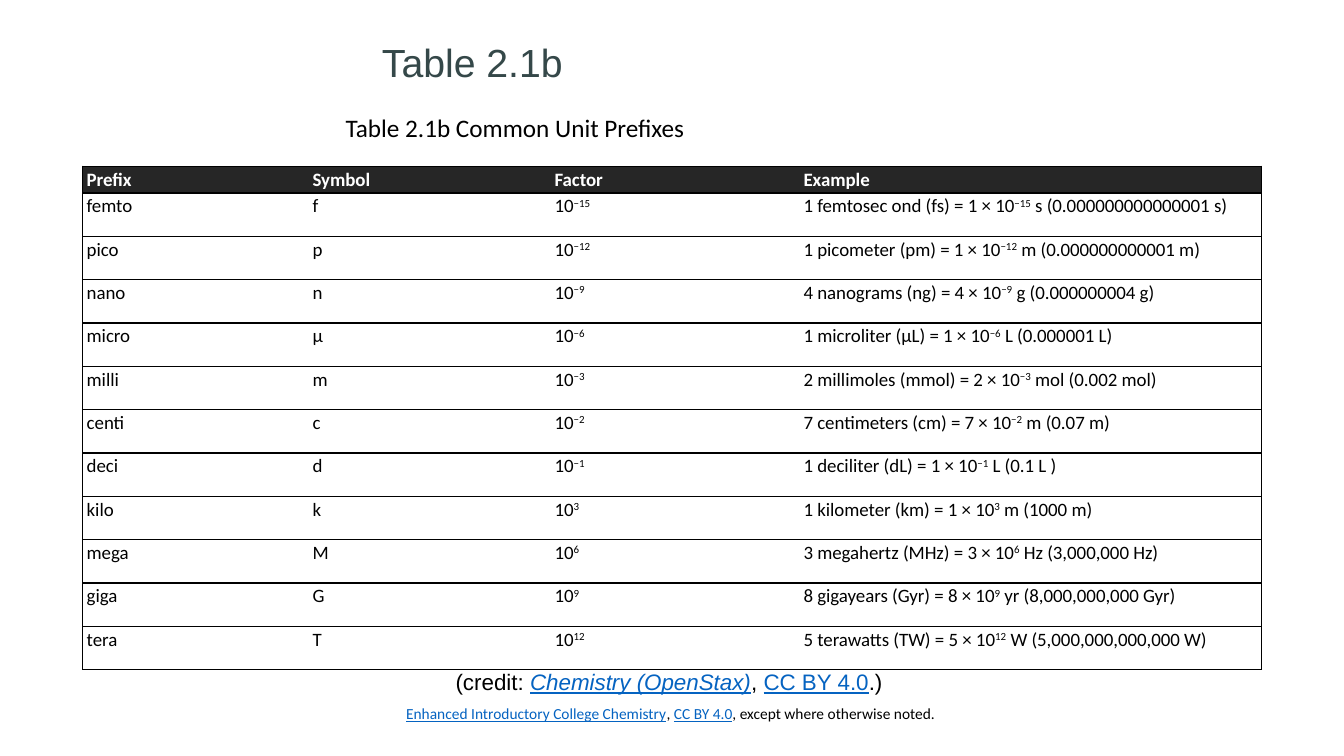
from lxml.etree import SubElement
from pptx import Presentation
from pptx.dml.color import RGBColor
from pptx.enum.text import MSO_ANCHOR
from pptx.oxml.ns import qn
from pptx.util import Inches, Pt

BLACK = RGBColor(0x00, 0x00, 0x00)
WHITE = RGBColor(0xFF, 0xFF, 0xFF)
HEADER_FILL = RGBColor(0x26, 0x26, 0x26)
TITLE_COLOR = RGBColor(0x35, 0x48, 0x49)
LINK_COLOR = RGBColor(0x05, 0x63, 0xC1)
PLAIN_STYLE = "{2D5ABB26-0587-4C30-8999-92F81FD0307C}"

HEADINGS = ["Prefix", "Symbol", "Factor", "Example"]
COLUMN_WIDTHS = [2.24, 2.4, 2.47, 4.58]
HEADER_HEIGHT, ROW_HEIGHT = 0.23, 0.43
# prefix, symbol, exponent, example before and after its power of ten
PREFIXES = [
    ("femto", "f", "−15", "1 femtosec ond (fs) = 1", "s (0.000000000000001 s)"),
    ("pico", "p", "−12", "1 picometer (pm) = 1", "m (0.000000000001 m)"),
    ("nano", "n", "−9", "4 nanograms (ng) = 4", "g (0.000000004 g)"),
    ("micro", "µ", "−6", "1 microliter (μL) = 1", "L (0.000001 L)"),
    ("milli", "m", "−3", "2 millimoles (mmol) = 2", "mol (0.002 mol)"),
    ("centi", "c", "−2", "7 centimeters (cm) = 7", "m (0.07 m)"),
    ("deci", "d", "−1", "1 deciliter (dL) = 1", "L (0.1 L )"),
    ("kilo", "k", "3", "1 kilometer (km) = 1", "m (1000 m)"),
    ("mega", "M", "6", "3 megahertz (MHz) = 3", "Hz (3,000,000 Hz)"),
    ("giga", "G", "9", "8 gigayears (Gyr) = 8", "yr (8,000,000,000 Gyr)"),
    ("tera", "T", "12", "5 terawatts (TW) = 5", "W (5,000,000,000,000 W)"),
]


def add_span(para, text, size, name="Calibri", color=BLACK):
    span = para.add_run()
    span.text = text
    span.font.size = Pt(size)
    span.font.name = name
    span.font.color.rgb = color
    return span


def add_text_box(page, left, top, width, height, wrap=True):
    """Add an empty text box and return its frame."""
    box = page.shapes.add_textbox(Inches(left), Inches(top), Inches(width), Inches(height))
    box.text_frame.word_wrap = wrap
    return box.text_frame


def add_title(page, left, top, width, height):
    frame = add_text_box(page, left, top, width, height)
    frame.vertical_anchor = MSO_ANCHOR.BOTTOM
    para = frame.paragraphs[0]
    para.line_spacing = 0.9
    add_span(para, "Table 2.1b", 28, "Arial", TITLE_COLOR)


def add_caption(page, left, top, width, height):
    frame = add_text_box(page, left, top, width, height)
    add_span(frame.paragraphs[0], "Table 2.1b Common Unit Prefixes", 18)


def add_linked_line(frame, parts, size, name):
    """Write (text, is_link, is_italic) parts as one line."""
    for text, is_link, is_italic in parts:
        span = add_span(frame.paragraphs[0], text, size, name, LINK_COLOR if is_link else BLACK)
        span.font.underline = is_link
        span.font.italic = is_italic


def add_credit(page, left, top, width, height):
    frame = add_text_box(page, left, top, width, height, wrap=False)
    add_linked_line(frame, [
        ("(credit: ", False, False),
        ("Chemistry (OpenStax)", True, True),
        (", ", False, False),
        ("CC BY 4.0", True, False),
        (".)", False, False),
    ], 16, "Arial")


def add_footer(page, left, top, width, height):
    frame = add_text_box(page, left, top, width, height)
    add_linked_line(frame, [
        ("Enhanced Introductory College Chemistry", True, False),
        (", ", False, False),
        ("CC BY 4.0", True, False),
        (", except where otherwise noted.", False, False),
    ], 11, "Calibri")


def style_cell(cell, fill, sides):
    """Set margins, 1 pt black borders on the given sides, and fill."""
    cell.margin_left = cell.margin_right = Inches(0.04)
    cell.margin_top = cell.margin_bottom = Inches(0.02)
    properties = cell._tc.get_or_add_tcPr()
    for side in sides:
        line = SubElement(properties, qn(f"a:ln{side}"), w=str(Pt(1)))
        solid = SubElement(line, qn("a:solidFill"))
        SubElement(solid, qn("a:srgbClr"), val=str(BLACK))
    cell.fill.solid()
    cell.fill.fore_color.rgb = fill


def add_prefix_table(page, left, top, width, height):
    frame = page.shapes.add_table(len(PREFIXES) + 1, len(HEADINGS), Inches(left),
                                  Inches(top), Inches(width), Inches(height))
    table = frame.table
    table.horz_banding = False
    table._tbl.tblPr.find(qn("a:tableStyleId")).text = PLAIN_STYLE
    for column, column_width in zip(table.columns, COLUMN_WIDTHS):
        column.width = Inches(column_width)
    contents = [[[heading] for heading in HEADINGS]]
    for prefix, symbol, power, before, after in PREFIXES:
        contents.append([[prefix], [symbol], ["10", power],
                         [f"{before} × 10", power, f" {after}"]])
    for r, row in enumerate(contents):
        is_header = r == 0
        table.rows[r].height = Inches(HEADER_HEIGHT if is_header else ROW_HEIGHT)
        for c, parts in enumerate(row):
            cell = table.cell(r, c)
            sides = {0: "LTB", len(row) - 1: "RTB"}.get(c, "TB")
            style_cell(cell, HEADER_FILL if is_header else WHITE, sides)
            para = cell.text_frame.paragraphs[0]
            for i, text in enumerate(parts):
                span = add_span(para, text, 13.5, color=WHITE if is_header else BLACK)
                span.font.bold = is_header
                if i == 1:
                    span.font._element.set("baseline", "30000")


def main():
    deck = Presentation()
    deck.slide_width, deck.slide_height = Inches(13.33), Inches(7.5)
    page = deck.slides.add_slide(deck.slide_layouts[6])
    add_footer(page, 3.93, 6.94, 7.07, 0.4)
    add_title(page, 3.69, 0.2, 4.3, 0.7)
    add_caption(page, 3.33, 1.07, 6.67, 0.4)
    add_prefix_table(page, 0.82, 1.65, 11.69, 4.95)
    add_credit(page, 4.42, 6.58, 4.49, 0.37)
    deck.save("out.pptx")


if __name__ == "__main__":
    main()
